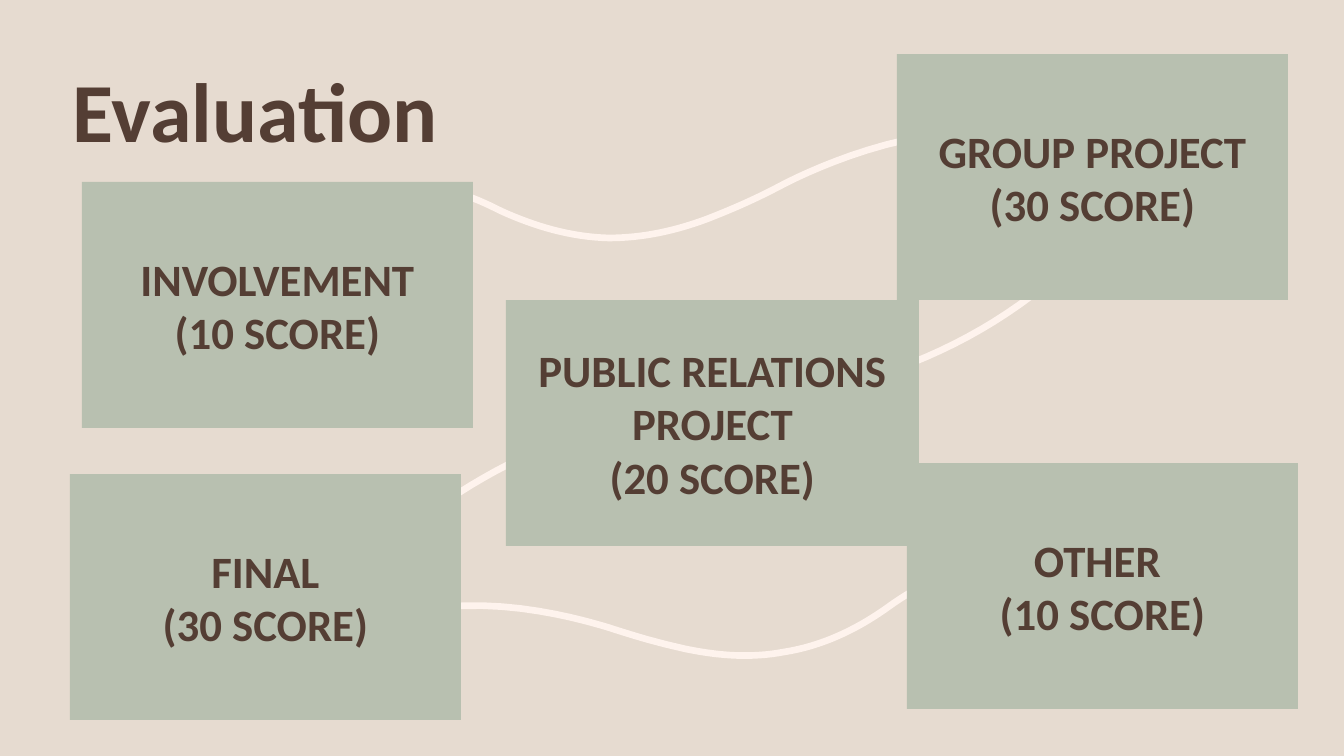
"""Build the Evaluation slide: five score cards over flowing curves."""
import dataclasses
import typing

import pptx
import pptx.dml.color
import pptx.enum.shapes
import pptx.enum.text
import pptx.shapes.autoshape
import pptx.slide
import pptx.text.text
import pptx.util

EMU_PER_PX = 9072
CURVE_STEPS = 16

Point = tuple[int, int]


@dataclasses.dataclass(frozen=True)
class Theme:
    """Colours, font and sizes of the slide."""

    background: str = "E6DBD0"
    card: str = "B8C0B0"
    curve: str = "FEF3ED"
    text: str = "543E34"
    font: str = "Calibri"
    title_size: int = 60
    card_size: int = 32
    curve_width: float = 4.75


@dataclasses.dataclass(frozen=True)
class Card:
    """A topic and its score in a rectangle, in px."""

    topic: str
    score: int
    left: int
    top: int
    width: int = 391
    height: int = 246


@dataclasses.dataclass(frozen=True)
class Curve:
    """A chain of cubic segments: a start, then three points for each segment."""

    start: Point
    points: tuple[Point, ...]


THEME = Theme()

CURVES = (
    Curve((840, 386), ((920, 366), (993, 330), (1055, 277))),
    Curve((589, 431), ((513, 456), (449, 494), (392, 543))),
    Curve((309, 225), (
        (353, 188), (401, 178), (453, 192),
        (470, 196), (485, 203), (501, 211),
        (534, 226), (570, 237), (609, 238),
        (642, 238), (675, 231), (707, 219),
        (743, 205), (763, 195), (784, 184),
        (807, 172), (948, 104), (1035, 147),
    )),
    Curve((927, 584), (
        (911, 591), (898, 600), (884, 610),
        (855, 630), (822, 646), (784, 652),
        (752, 658), (720, 656), (686, 649),
        (650, 641), (629, 634), (607, 627),
        (583, 620), (437, 575), (350, 641),
    )),
)

CARDS = (
    Card("INVOLVEMENT", 10, 82, 182),
    Card("GROUP PROJECT", 30, 897, 54),
    Card("PUBLIC RELATIONS PROJECT", 20, 506, 300, width=413),
    Card("FINAL", 30, 70, 474),
    Card("OTHER ", 10, 907, 463),
)


def px(length: float) -> pptx.util.Emu:
    """Turn px into EMU."""
    return pptx.util.Emu(round(length * EMU_PER_PX))


def color(code: str) -> pptx.dml.color.RGBColor:
    """Turn a hex code into a colour."""
    return pptx.dml.color.RGBColor.from_string(code)


def add_run(paragraph: pptx.text.text._Paragraph, text: str, size: int) -> None:
    """Add one bold run in the theme's font."""
    run = paragraph.add_run()
    run.text = text
    run.font.name = THEME.font
    run.font.size = pptx.util.Pt(size)
    run.font.bold = True
    run.font.color.rgb = color(THEME.text)


def sample_curve(curve: Curve) -> typing.Iterator[tuple[int, int]]:
    """Yield EMU points along the cubic segments after the start."""
    start = curve.start
    for index in range(0, len(curve.points), 3):
        first, second, end = curve.points[index:index + 3]
        for step in range(1, CURVE_STEPS + 1):
            t = step / CURVE_STEPS
            x, y = (
                (1 - t) ** 3 * a + 3 * (1 - t) ** 2 * t * b
                + 3 * (1 - t) * t ** 2 * c + t ** 3 * d
                for a, b, c, d in zip(start, first, second, end)
            )
            yield px(x), px(y)
        start = end


def draw_curve(slide: pptx.slide.Slide, curve: Curve) -> None:
    """Draw one open curve."""
    start_x, start_y = curve.start
    builder = slide.shapes.build_freeform(px(start_x), px(start_y))
    builder.add_line_segments(list(sample_curve(curve)), close=False)
    shape = builder.convert_to_shape()
    shape.shadow.inherit = False
    shape.fill.background()
    shape.line.color.rgb = color(THEME.curve)
    shape.line.width = pptx.util.Pt(THEME.curve_width)


def draw_title(slide: pptx.slide.Slide, text: str) -> None:
    """Draw the slide title."""
    shape = slide.shapes.add_textbox(px(63), px(78), px(1008), px(75))
    frame = shape.text_frame
    frame.word_wrap = True
    frame.vertical_anchor = pptx.enum.text.MSO_ANCHOR.MIDDLE
    paragraph = frame.paragraphs[0]
    paragraph.line_spacing = 0.9
    add_run(paragraph, text, THEME.title_size)


def draw_card(slide: pptx.slide.Slide, card: Card) -> None:
    """Draw one card with its topic above its score."""
    shape = slide.shapes.add_shape(
        pptx.enum.shapes.MSO_SHAPE.RECTANGLE,
        px(card.left), px(card.top), px(card.width), px(card.height),
    )
    shape.shadow.inherit = False
    shape.fill.solid()
    shape.fill.fore_color.rgb = color(THEME.card)
    shape.line.fill.background()
    frame = shape.text_frame
    frame.word_wrap = True
    frame.vertical_anchor = pptx.enum.text.MSO_ANCHOR.MIDDLE
    paragraphs = (frame.paragraphs[0], frame.add_paragraph())
    for paragraph, text in zip(paragraphs, (card.topic, f"({card.score} SCORE)")):
        paragraph.alignment = pptx.enum.text.PP_ALIGN.CENTER
        add_run(paragraph, text, THEME.card_size)


def main() -> None:
    """Build and save the presentation."""
    presentation = pptx.Presentation()
    presentation.slide_width = px(1344)
    presentation.slide_height = px(756)
    slide = presentation.slides.add_slide(presentation.slide_layouts[6])
    slide.background.fill.solid()
    slide.background.fill.fore_color.rgb = color(THEME.background)
    for curve in CURVES:
        draw_curve(slide, curve)
    draw_title(slide, "Evaluation")
    for card in CARDS:
        draw_card(slide, card)
    presentation.save("out.pptx")


if __name__ == "__main__":
    main()
